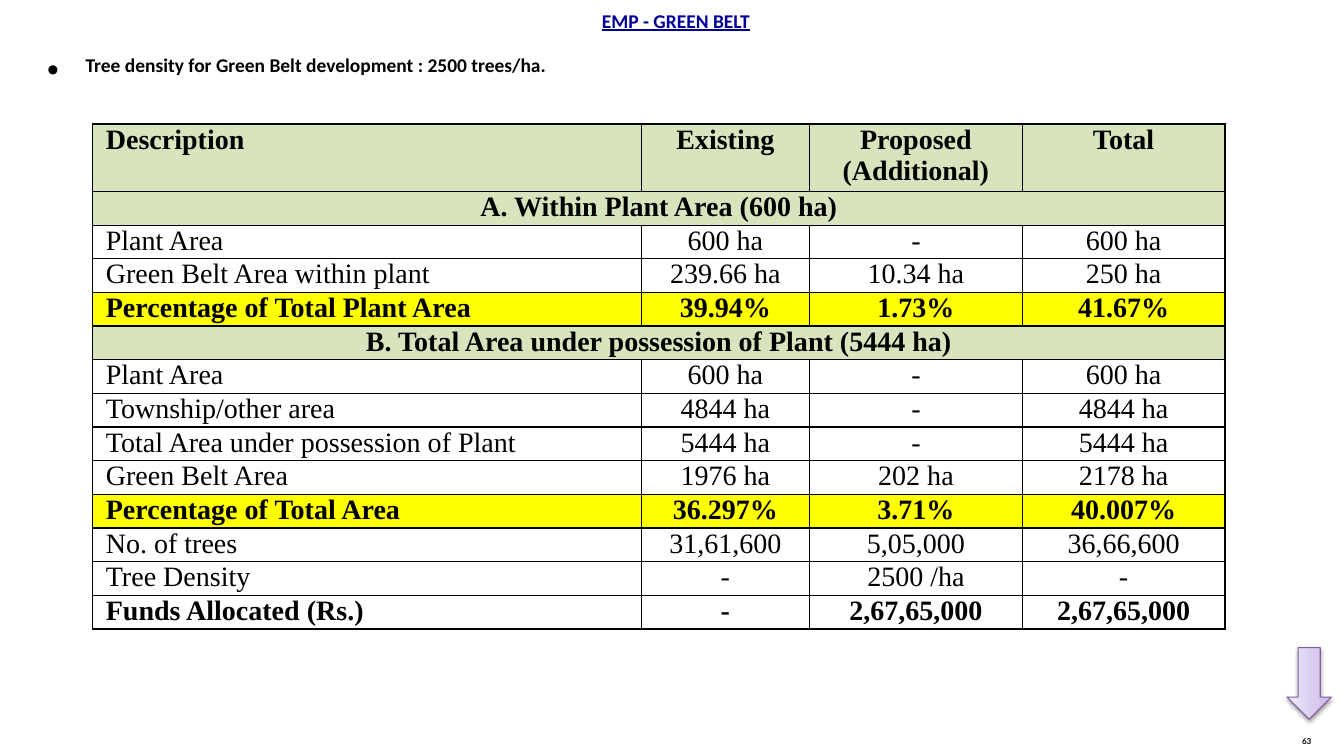
import pptx
import pptx.dml.color
import pptx.enum.shapes
import pptx.enum.text
import pptx.oxml
import pptx.oxml.ns
import pptx.util
from lxml import etree

Inches = pptx.util.Inches
Align = pptx.enum.text.PP_ALIGN

COLORS = {
    "ink": "000000", "title": "000099", "heading": "D7E4BD", "highlight": "FFFF00",
    "arrow_dark": "C9B5E8", "arrow_mid": "D8CBEE", "arrow_light": "F0EAF9",
    "arrow_line": "7D60A0",
}

# Row style and cell texts; a section row holds one text across all columns
ROWS = [
    ("heading", ["Description", "Existing", "Proposed (Additional)", "Total"]),
    ("heading", ["A. Within Plant Area (600 ha)"]),
    ("plain", ["Plant Area", "600 ha", "-", "600 ha"]),
    ("plain", ["Green Belt Area within plant", "239.66 ha", "10.34 ha", "250 ha"]),
    ("highlight", ["Percentage of Total Plant Area", "39.94%", "1.73%", "41.67%"]),
    ("heading", ["B. Total Area under possession of Plant (5444 ha)"]),
    ("plain", ["Plant Area", "600 ha", "-", "600 ha"]),
    ("plain", ["Township/other area", "4844 ha", "-", "4844 ha"]),
    ("plain", ["Total Area under possession of Plant", "5444 ha", "-", "5444 ha"]),
    ("plain", ["Green Belt Area", "1976 ha", "202 ha", "2178 ha"]),
    ("highlight", ["Percentage of Total Area", "36.297%", "3.71%", "40.007%"]),
    ("plain", ["No. of trees", "31,61,600", "5,05,000", "36,66,600"]),
    ("plain", ["Tree Density", "-", "2500 /ha", "-"]),
    ("total", ["Funds Allocated (Rs.)", "-", "2,67,65,000", "2,67,65,000"]),
]
COLUMN_WIDTHS = [5.44, 1.67, 2.11, 2.01]


def rgb(name):
    return pptx.dml.color.RGBColor.from_string(COLORS[name])


def add_xml(parent, tag, **attributes):
    values = {key: str(value) for key, value in attributes.items()}
    return etree.SubElement(parent, pptx.oxml.ns.qn(tag), values)


class GreenBeltPage:
    def __init__(self, deck):
        self.page = deck.slides.add_slide(deck.slide_layouts[6])

    def style(self, para, font, size, color="ink", bold=True, underline=False, raised=False):
        for span in para.runs:
            span.font.name = font
            span.font.size = pptx.util.Pt(size)
            span.font.bold = bold
            span.font.underline = underline
            span.font.color.rgb = rgb(color)
            if raised:
                span._r.get_or_add_rPr().set("baseline", "30000")

    def text(self, place, words, font, size, align=Align.CENTER, bullet=False, **look):
        box = self.page.shapes.add_textbox(*map(Inches, place))
        box.text_frame.word_wrap = True
        box.text_frame.text = words
        para = box.text_frame.paragraphs[0]
        para.alignment = align
        if bullet:
            properties = para._p.get_or_add_pPr()
            properties.set("marL", str(Inches(0.38)))
            properties.set("indent", str(-Inches(0.38)))
            add_xml(properties, "a:buFont", typeface="Arial")
            add_xml(properties, "a:buChar", char="•")
        self.style(para, font, size, raised=True, **look)

    def border(self, cell):
        properties = cell._tc.get_or_add_tcPr()
        for side in "LRTB":
            line = add_xml(properties, f"a:ln{side}", w=pptx.util.Pt(1))
            add_xml(add_xml(line, "a:solidFill"), "a:srgbClr", val=COLORS["ink"])

    def table(self, left, top, height, header_height, rows, widths):
        frame = self.page.shapes.add_table(
            len(rows), len(widths), Inches(left), Inches(top),
            Inches(sum(widths)), Inches(height))
        grid = frame.table
        grid.first_row = grid.horz_banding = False
        for column, width in zip(grid.columns, widths):
            column.width = Inches(width)
        row_height = (height - header_height) / (len(rows) - 1)
        for index, (kind, texts) in enumerate(rows):
            grid.rows[index].height = Inches(row_height if index else header_height)
            section = len(texts) == 1
            if section:
                grid.cell(index, 0).merge(grid.cell(index, len(widths) - 1))
            for column in range(len(widths)):
                cell = grid.cell(index, column)
                self.border(cell)
                if kind in COLORS:
                    cell.fill.solid()
                    cell.fill.fore_color.rgb = rgb(kind)
                else:
                    cell.fill.background()
                cell.margin_left = cell.margin_right = Inches(0.13)
                cell.margin_top = cell.margin_bottom = 0
                if column < len(texts):
                    cell.text_frame.text = texts[column]
                    para = cell.text_frame.paragraphs[0]
                    para.alignment = Align.CENTER if column or section else Align.LEFT
                    self.style(para, "Times New Roman", 20, bold=kind != "plain")

    def down_arrow(self, place):
        arrow = self.page.shapes.add_shape(
            pptx.enum.shapes.MSO_SHAPE.LEFT_ARROW, *map(Inches, place))
        arrow.rotation = 270
        # Three-stop gradient
        arrow.fill.gradient()
        arrow.fill.gradient_angle = 90
        gradient = arrow._element.spPr.find(pptx.oxml.ns.qn("a:gradFill"))
        stops = gradient.find(pptx.oxml.ns.qn("a:gsLst"))
        for stop in list(stops):
            stops.remove(stop)
        for position, name in ((0, "arrow_dark"), (35, "arrow_mid"), (100, "arrow_light")):
            stop = add_xml(stops, "a:gs", pos=position * 1000)
            add_xml(stop, "a:srgbClr", val=COLORS[name])
        arrow.line.color.rgb = rgb("arrow_line")
        arrow.line.width = pptx.util.Pt(0.75)
        # Soft shadow below
        arrow.shadow.inherit = False
        effects = arrow._element.spPr.find(pptx.oxml.ns.qn("a:effectLst"))
        shadow = add_xml(effects, "a:outerShdw", blurRad=pptx.util.Pt(3.1),
                         dist=pptx.util.Pt(1.6), dir=90 * 60000, rotWithShape=0)
        color = add_xml(shadow, "a:srgbClr", val=COLORS["ink"])
        add_xml(color, "a:alpha", val=38000)


def main():
    deck = pptx.Presentation()
    deck.slide_width = Inches(13.33)
    deck.slide_height = Inches(7.5)
    page = GreenBeltPage(deck)

    # Page number, bullet and title
    page.text((12.65, 7.24, 0.62, 0.27), "63", "Lato", 10)
    page.text((0.37, 0.44, 9.61, 0.5),
              "Tree density for Green Belt development : 2500 trees/ha.",
              "Calibri", 24, align=Align.JUSTIFY, bullet=True)
    page.down_arrow((12.63, 6.56, 0.71, 0.44))
    page.text((0.68, 0, 12.05, 0.5), "EMP - GREEN BELT", "Calibri", 24,
              color="title", underline=True)

    # Green belt figures
    page.table(0.92, 1.23, 5, 0.67, ROWS, COLUMN_WIDTHS)
    deck.save("out.pptx")


if __name__ == "__main__":
    main()
